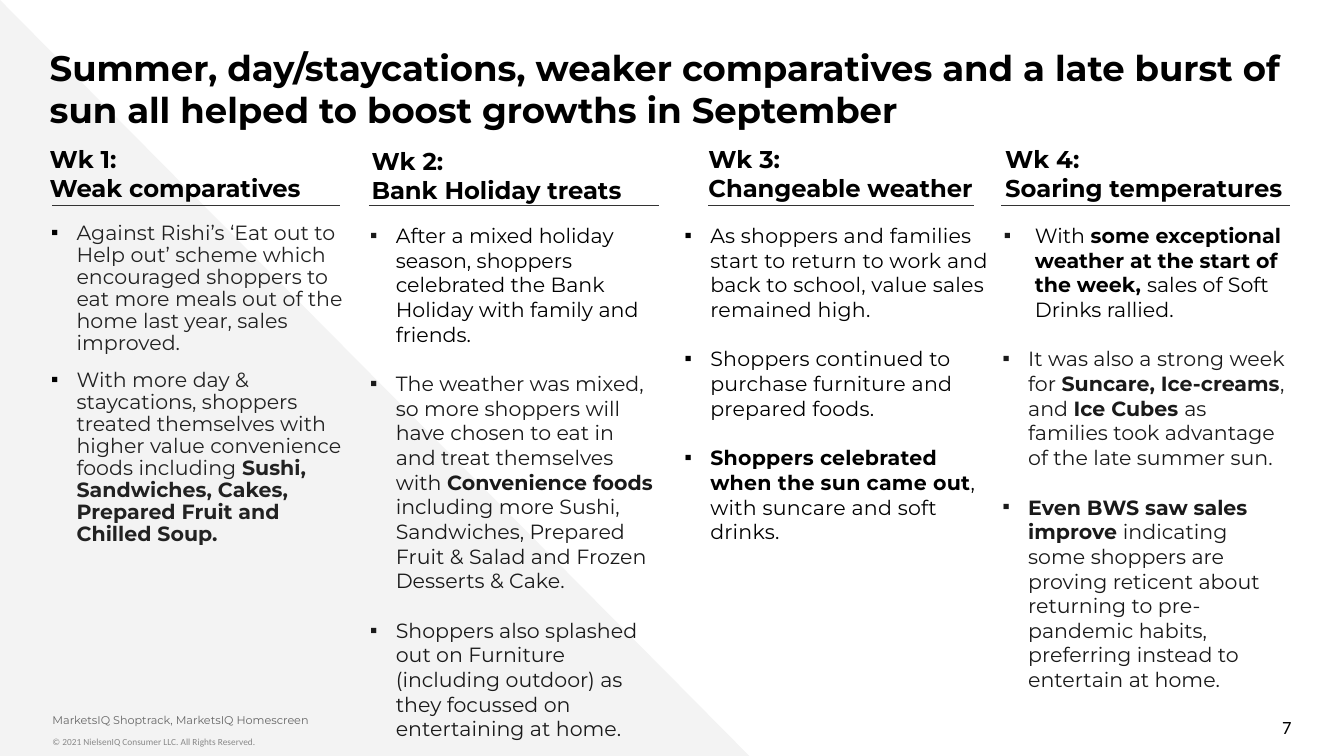
from lxml.etree import SubElement
from pptx import Presentation
from pptx.dml.color import RGBColor
from pptx.enum.shapes import MSO_CONNECTOR as Connector, MSO_SHAPE as Shape
from pptx.enum.text import MSO_ANCHOR as Anchor, MSO_AUTO_SIZE as AutoSize, PP_ALIGN as Align
from pptx.oxml.ns import qn
from pptx.util import Inches, Pt

COLORS = {"black": "000000", "ink": "1A1A1A", "soft": "222222", "rule": "333333",
          "source": "666666", "legal": "888888", "wedge": "F3F3F3"}

deck = Presentation()
deck.slide_width = Inches(10)
deck.slide_height = deck.slide_width * 9 // 16
COL = deck.slide_width / 100      # grid of 100 columns
ROW = COL                         # with square cells
slide = deck.slides.add_slide(deck.slide_layouts[5])


def place(col, row, cols, rows):
    return int(col * COL), int(row * ROW), int(cols * COL), int(rows * ROW)


def write(box, paragraphs, size=11, font="Montserrat", color="black", bold=False, align=Align.LEFT,
          anchor=Anchor.TOP, inset=0.1, indents=None, bullet=None, leading=None, gap=0, tracking=0):
    """Fill a box; ** switches bold, color and indents may be one per paragraph."""
    frame = box.text_frame
    frame.word_wrap, frame.auto_size, frame.vertical_anchor = True, AutoSize.NONE, anchor
    frame.margin_left = frame.margin_right = 0
    frame.margin_top = frame.margin_bottom = Inches(inset)
    for i, text in enumerate(paragraphs):
        par = frame.paragraphs[0] if i == 0 else frame.add_paragraph()
        par.alignment, par.space_after = align, Pt(gap)
        if leading:
            par.line_spacing = Pt(leading)
        if bullet:
            left, hanging = indents[i]
            props = par._p.get_or_add_pPr()
            props.set("marL", str(Inches(left)))
            props.set("indent", str(-Inches(hanging)))
            tint = SubElement(props, qn("a:buClr"))
            SubElement(tint, qn("a:srgbClr"), val=COLORS[bullet])
            SubElement(props, qn("a:buFont"), typeface="Calibri")
            SubElement(props, qn("a:buChar"), char="▪")
        shade = color if isinstance(color, str) else color[i]
        for part, words in enumerate(text.split("**")):
            if not words:
                continue
            run = par.add_run()
            run.text = words
            run.font.name, run.font.size = font, Pt(size)
            run.font.bold = bold or part % 2 == 1
            run.font.color.rgb = RGBColor.from_string(COLORS[shade])
            if tracking:
                run._r.get_or_add_rPr().set("spc", str(tracking))


# Background wedge, sent behind the title
wedge = slide.shapes.add_shape(Shape.RIGHT_TRIANGLE, *place(0, 0, 55.9, 56.4))
wedge.shadow.inherit = False
wedge.fill.solid()
wedge.fill.fore_color.rgb = RGBColor.from_string(COLORS["wedge"])
wedge.line.fill.background()
title = slide.shapes.title
title._element.addprevious(wedge._element)

# Title
title.left, title.top, title.width, title.height = place(3.7, 2.4, 92.2, 4.3)
write(title, ["Summer, day/staycations, weaker comparatives and a late burst of sun "
              "all helped to boost growths in September"], size=19, bold=True)

# Four weeks: heading box (left, top, width), rule (from, to), story box (left, width, height)
weeks = [
    dict(name="Wk 1:", theme="Weak comparatives",
         heading=(3.7, 11.8, 21.8), rule=(3.9, 25.3), story=(-1.2, 27.4, 33),
         points=["Against Rishi’s ‘Eat out to Help out’ scheme which encouraged shoppers to eat more "
                 "meals out of the home last year, sales improved.",
                 "With more day & staycations, shoppers treated themselves with higher value convenience "
                 "foods including **Sushi, Sandwiches, Cakes, Prepared Fruit and Chilled Soup.**"],
         look=dict(color="soft", bullet="black", indents=[(0.69, 0.19)] * 2, leading=11.8, gap=8)),
    dict(name="Wk 2:", theme="Bank Holiday treats",
         heading=(27.65, 11.9, 25.4), rule=(27.45, 49), story=(27.45, 21.5, 33),
         points=["After a mixed holiday season, shoppers celebrated the Bank Holiday with family and friends.",
                 "The weather was mixed, so more shoppers will have chosen to eat in and treat themselves with "
                 "**Convenience foods **including more Sushi, Sandwiches, Prepared Fruit & Salad and "
                 "Frozen Desserts & Cake.",
                 "Shoppers also splashed out on Furniture (including outdoor) as they focussed on "
                 "entertaining at home."],
         look=dict(color=["black", "ink", "ink"], bullet="ink", indents=[(0.2, 0.19)] * 3, gap=13.3)),
    dict(name="Wk 3:", theme="Changeable weather",
         heading=(52.7, 11.8, 23.5), rule=(52.7, 72.5), story=(50.95, 23.4, 35.8),
         points=["As shoppers and families start to return to work and back to school, "
                 "value sales remained high.",
                 "Shoppers continued to purchase furniture and prepared foods.",
                 "**Shoppers celebrated when the sun came out**, with suncare and soft drinks."],
         look=dict(bullet="black", indents=[(0.19, 0.19)] * 3, gap=13.3, tracking=10)),
    dict(name="Wk 4:", theme="Soaring temperatures",
         heading=(74.8, 11.8, 25.4), rule=(74.5, 96), story=(74.5, 21.5, 35.8),
         points=["With **some exceptional weather at the start of the week, **sales of Soft Drinks rallied.",
                 "It was also a strong week for **Suncare, Ice-creams**, and **Ice Cubes **as families "
                 "took advantage of the late summer sun.",
                 "**Even BWS saw sales improve **indicating some shoppers are proving reticent about "
                 "returning to pre-pandemic habits, preferring instead to entertain at home."],
         look=dict(color=["black", "ink", "ink"], bullet="ink", gap=13.3,
                   indents=[(0.25, 0.23), (0.2, 0.19), (0.2, 0.19)])),
]
for week in weeks:
    start, end = week["rule"]
    rule = slide.shapes.add_connector(Connector.STRAIGHT, *place(start, 15.3, end, 15.3))
    rule.line.color.rgb = RGBColor.from_string(COLORS["rule"])
    rule.line.width = Pt(0.75)
    SubElement(rule._element.spPr, qn("a:effectLst"))

    left, width, height = week["story"]
    story = slide.shapes.add_textbox(*place(left, 16.1, width, height))
    write(story, week["points"], inset=0.05, **week["look"])

    heading = slide.shapes.add_textbox(*place(*week["heading"], 4.3))
    write(heading, [week["name"], week["theme"]], size=13, bold=True, anchor=Anchor.BOTTOM)

# Footer: data source, copyright, page number
source = slide.shapes.add_textbox(*place(3.9, 53.1, 89.2, 2))
write(source, ["MarketsIQ Shoptrack, MarketsIQ Homescreen"], size=6, color="source", anchor=Anchor.BOTTOM)
legal = slide.shapes.add_textbox(*place(3.9, 54.3, 55.4, 2))
write(legal, ["© 2021 NielsenIQ Consumer LLC. All Rights Reserved."],
      size=5, font="Calibri", color="legal", inset=0.05)
page = slide.shapes.add_textbox(*place(73.6, 52.6, 22.5, 3))
write(page, ["7"], size=10, font="Calibri", align=Align.RIGHT, anchor=Anchor.MIDDLE, inset=0.05)

deck.save("out.pptx")
